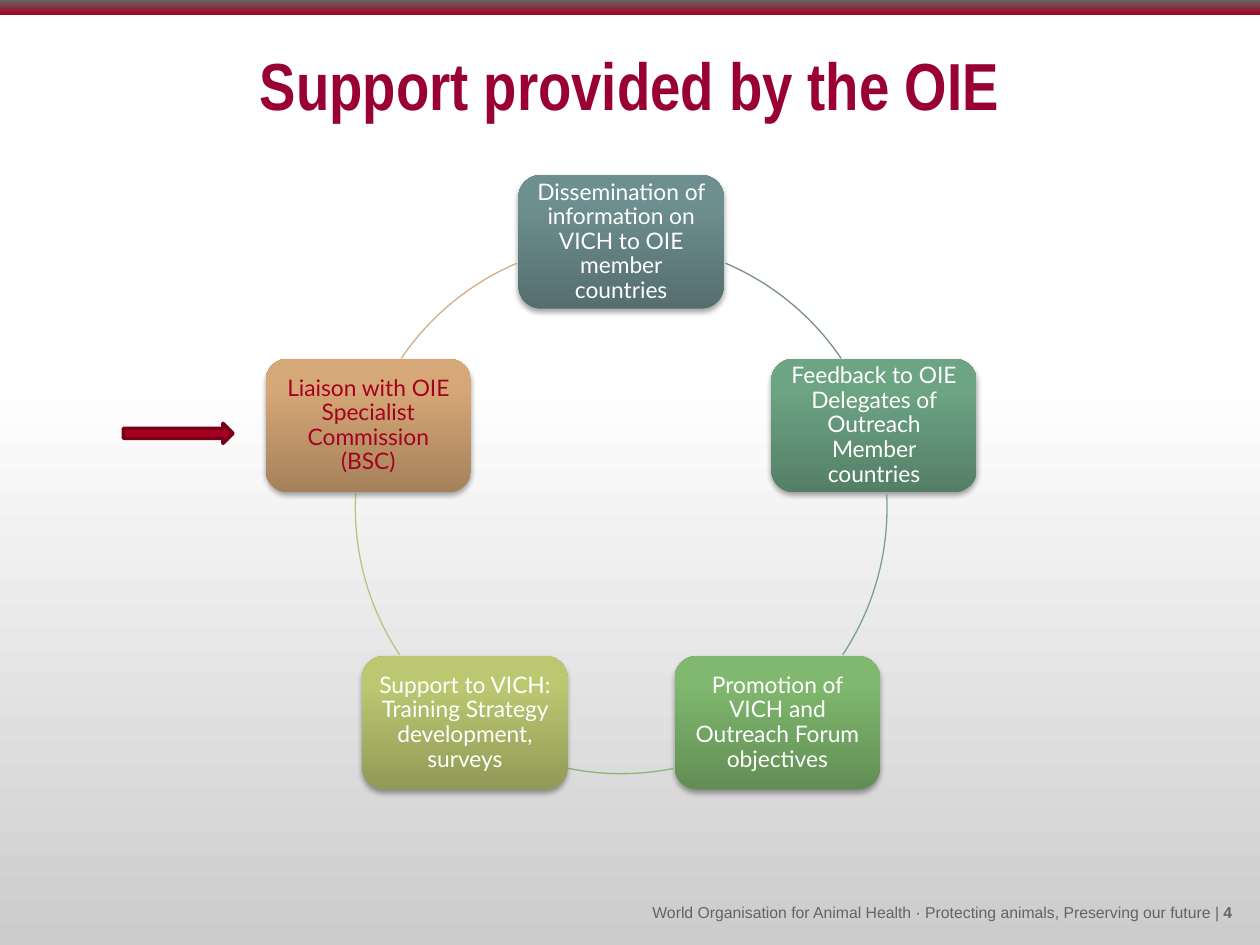
from dataclasses import dataclass
from math import cos, radians, sin

from lxml.etree import SubElement
from pptx import Presentation
from pptx.dml.color import RGBColor
from pptx.enum.shapes import MSO_SHAPE as Shape
from pptx.enum.text import MSO_ANCHOR as Anchor, PP_ALIGN as Align
from pptx.oxml.ns import qn
from pptx.util import Inches, Pt


@dataclass(frozen=True)
class Theme:
    title: str = "990033"
    accent: str = "A50021"
    accent_edge: str = "7A0018"
    muted: str = "636463"
    light: str = "FFFFFF"
    shadow: str = "000000"
    backdrop: tuple = ((0, "CCCCCC"), (60, "FFFFFF"))
    band: tuple = ((0, "A50021"), (100, "636463"))
    title_font: str = "Arial Narrow"
    step_font: str = "Lato"
    footer_font: str = "Arial"
    title_size: float = 38
    step_size: float = 13
    footer_size: float = 9


THEME = Theme()
TITLE = "Support provided by the OIE"
FOOTER = (
    "World Organisation for Animal Health · Protecting animals, Preserving our future | ",
    "4",
)
STEPS = [
    ("Dissemination of information on VICH to OIE member countries",
     ("556E6F", "6E8F90", "6E9092"), THEME.light),
    ("Feedback to OIE Delegates of Outreach Member countries",
     ("547F66", "6DA584", "6DA784"), THEME.light),
    ("Promotion of VICH and Outreach Forum objectives",
     ("628E55", "7FB86E", "7FBA6D"), THEME.light),
    ("Support to VICH: Training Strategy development, surveys",
     ("919A57", "BCC871", "BECB70"), THEME.light),
    ("Liaison with OIE Specialist Commission (BSC)",
     ("A5815B", "D7A877", "D9A975"), THEME.accent),
]
ARCS = [
    (-66.9, -34.2, "769091"),
    (-3, 33.6, "77A489"),
    (78.5, 101.5, "88B57A"),
    (146.4, 183, "BAC47F"),
    (214.2, 246.9, "D2AD86"),
]
CENTER_X, CENTER_Y, RADIUS = 4.93, 4.03, 2.11
STEP_W, STEP_H = 1.63, 1.06


def rgb(color):
    return RGBColor.from_string(color)


def fill_gradient(fill, owner, stops):
    fill.gradient()
    fill.gradient_angle = 90
    stop_list = next(owner.iter(qn("a:gsLst")))
    for old in list(stop_list):
        stop_list.remove(old)
    for position, color in stops:
        stop = SubElement(stop_list, qn("a:gs"), pos=str(position * 1000))
        SubElement(stop, qn("a:srgbClr"), val=color)


def add_soft_shadow(shape):
    effects = shape._element.spPr.find(qn("a:effectLst"))
    outer = SubElement(effects, qn("a:outerShdw"), blurRad=str(Pt(3.1)),
                       dist=str(Pt(1.8)), dir="5400000", rotWithShape="0")
    color = SubElement(outer, qn("a:srgbClr"), val=THEME.shadow)
    SubElement(color, qn("a:alpha"), val="35000")


def add_plain(slide, kind, left, top, width, height):
    shape = slide.shapes.add_shape(kind, *map(Inches, (left, top, width, height)))
    shape.shadow.inherit = False
    shape.line.fill.background()
    return shape


def set_inset(frame, inset):
    frame.margin_left = frame.margin_right = Inches(inset)
    frame.margin_top = frame.margin_bottom = Inches(inset)


def style(font, name, size, color, bold=False):
    font.name, font.size, font.bold = name, Pt(size), bold
    font.color.rgb = rgb(color)


def add_frame(slide, left, top, width, height):
    frame = slide.shapes.add_textbox(*map(Inches, (left, top, width, height))).text_frame
    frame.word_wrap = True
    return frame


def add_footer(slide):
    frame = add_frame(slide, 2.55, 7.07, 7.23, 0.31)
    frame.vertical_anchor = Anchor.MIDDLE
    set_inset(frame, 0)
    line = frame.paragraphs[0]
    line.alignment, line.line_spacing = Align.RIGHT, 1.2
    for text, bold in zip(FOOTER, (False, True)):
        run = line.add_run()
        run.text = text
        style(run.font, THEME.footer_font, THEME.footer_size, THEME.muted, bold)


def add_title(slide):
    frame = add_frame(slide, 0.5, 0.3, 9, 1.25)
    frame.text = TITLE
    heading = frame.paragraphs[0]
    heading.alignment = Align.CENTER
    style(heading.runs[0].font, THEME.title_font, THEME.title_size, THEME.title, True)


def add_step(slide, index, text, shades, text_color):
    angle = radians(-90 + index * 360 / len(STEPS))
    left = CENTER_X + RADIUS * cos(angle) - STEP_W / 2
    top = CENTER_Y + RADIUS * sin(angle) - STEP_H / 2
    step = add_plain(slide, Shape.ROUNDED_RECTANGLE, left, top, STEP_W, STEP_H)
    fill_gradient(step.fill, step._element, zip((0, 80, 100), shades))
    add_soft_shadow(step)
    frame = step.text_frame
    frame.word_wrap = True
    frame.vertical_anchor = Anchor.MIDDLE
    set_inset(frame, 0.05)
    frame.text = text
    label = frame.paragraphs[0]
    label.alignment, label.line_spacing = Align.CENTER, 0.9
    style(label.runs[0].font, THEME.step_font, THEME.step_size, text_color)


def add_arc(slide, start, end, color):
    arc = add_plain(slide, Shape.ARC, CENTER_X - RADIUS, CENTER_Y - RADIUS,
                    2 * RADIUS, 2 * RADIUS)
    arc.fill.background()
    arc.line.color.rgb, arc.line.width = rgb(color), Pt(0.75)
    for position, angle in enumerate((start, end)):
        arc.adjustments[position] = angle % 360 * 0.6


def main():
    deck = Presentation()
    deck.slide_width, deck.slide_height = Inches(10), Inches(7.5)
    slide = deck.slides.add_slide(deck.slide_layouts[6])
    fill_gradient(slide.background.fill, slide._element, THEME.backdrop)

    add_footer(slide)
    band = add_plain(slide, Shape.RECTANGLE, 0, 0, 10, 0.12)
    fill_gradient(band.fill, band._element, THEME.band)
    add_title(slide)

    for index, (step, arc) in enumerate(zip(STEPS, ARCS)):
        add_step(slide, index, *step)
        add_arc(slide, *arc)

    pointer = add_plain(slide, Shape.RIGHT_ARROW, 0.98, 3.36, 0.87, 0.16)
    pointer.fill.solid()
    pointer.fill.fore_color.rgb = rgb(THEME.accent)
    pointer.line.color.rgb, pointer.line.width = rgb(THEME.accent_edge), Pt(2)

    deck.save("out.pptx")


if __name__ == "__main__":
    main()
